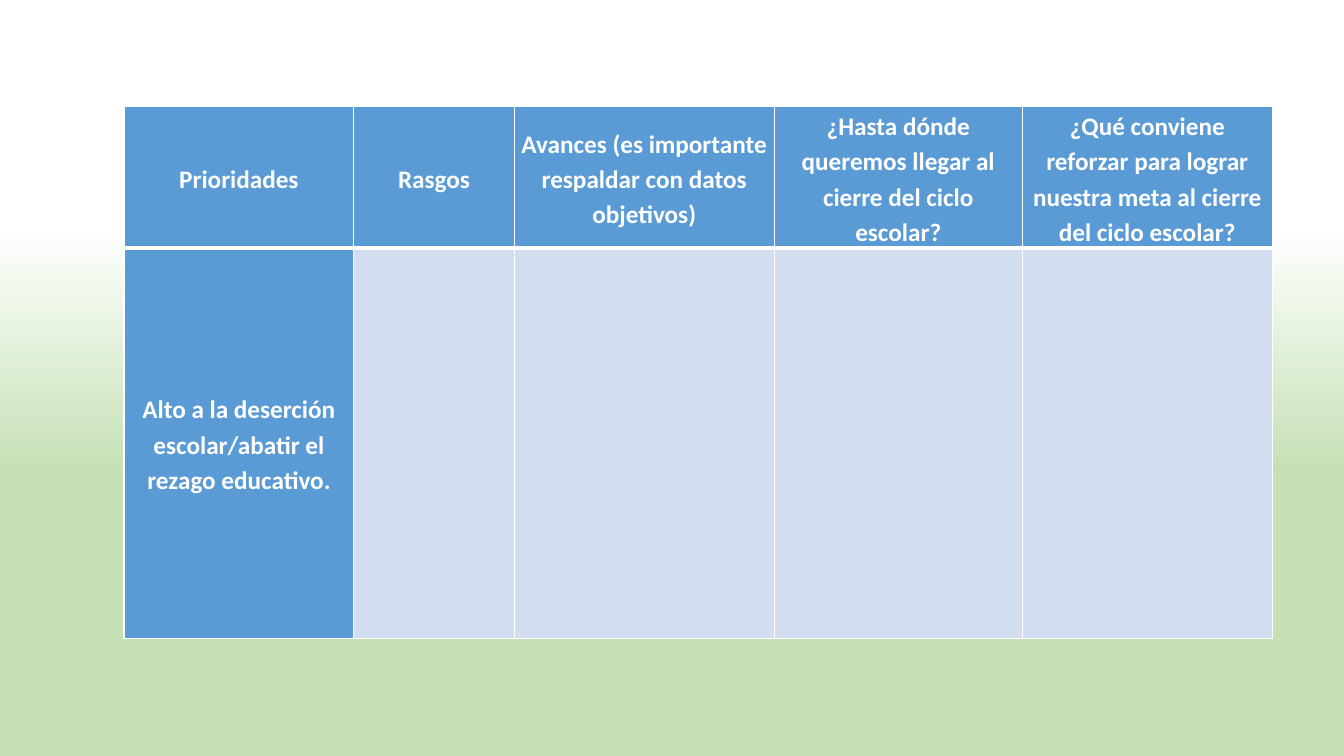
from lxml.etree import SubElement
from pptx import Presentation
from pptx.dml.color import RGBColor
from pptx.enum.text import MSO_ANCHOR as Anchor, PP_ALIGN as Align
from pptx.oxml.ns import qn
from pptx.util import Inches, Pt

WHITE, GREEN, BLUE, PALE_BLUE = "FFFFFF", "C5E0B4", "5B9BD5", "D2DEEF"
COLUMN_WIDTHS = [2.28, 1.59, 2.58, 2.46, 2.48]
ROW_HEIGHTS = [1.37, 3.87]
ROWS = [
    [
        "Prioridades",
        "Rasgos",
        "Avances (es importante respaldar con datos objetivos)",
        "¿Hasta dónde queremos llegar al cierre del ciclo escolar?",
        "¿Qué conviene reforzar para lograr nuestra meta al cierre del ciclo escolar?",
    ],
    ["Alto a la deserción escolar/abatir el rezago educativo.", "", "", "", ""],
]


def color(value):
    return RGBColor.from_string(value)


def add_border(cell, side, points):
    """Draw a white line on one side (L, R, T or B); call before filling the cell."""
    line = SubElement(cell._tc.get_or_add_tcPr(), qn(f"a:ln{side}"), w=str(Pt(points)))
    fill = SubElement(line, qn("a:solidFill"))
    SubElement(fill, qn("a:srgbClr"), val=WHITE)


deck = Presentation()
deck.slide_width, deck.slide_height = Inches(13.33), Inches(7.5)
slide = deck.slides.add_slide(deck.slide_layouts[6])

background = slide.background.fill
background.gradient()
background.gradient_angle = 270
for stop, position, value in zip(background.gradient_stops, [0.3, 0.63], [WHITE, GREEN]):
    stop.position = position
    stop.color.rgb = color(value)

table = slide.shapes.add_table(
    len(ROW_HEIGHTS), len(COLUMN_WIDTHS), Inches(1.23), Inches(1.06),
    Inches(sum(COLUMN_WIDTHS)), Inches(sum(ROW_HEIGHTS)),
).table
for column, width in zip(table.columns, COLUMN_WIDTHS):
    column.width = Inches(width)
for row, height in zip(table.rows, ROW_HEIGHTS):
    row.height = Inches(height)

for row_index, texts in enumerate(ROWS):
    for column_index, text in enumerate(texts):
        cell = table.cell(row_index, column_index)
        is_heading = row_index == 0 or column_index == 0
        header_edge = "B" if row_index == 0 else "T"
        for side in "LRTB":
            add_border(cell, side, 3 if side == header_edge else 1)
        cell.fill.solid()
        cell.fill.fore_color.rgb = color(BLUE if is_heading else PALE_BLUE)
        if not text:
            continue
        cell.vertical_anchor = Anchor.MIDDLE
        cell.margin_left = cell.margin_right = Inches(0.07)
        cell.margin_top = cell.margin_bottom = 0
        para = cell.text_frame.paragraphs[0]
        para.text = text
        para.alignment = Align.CENTER
        para.line_spacing = 1.15
        font = para.runs[0].font
        font.name, font.size, font.bold = "Calibri", Pt(18), True
        font.color.rgb = color(WHITE)

deck.save("out.pptx")
